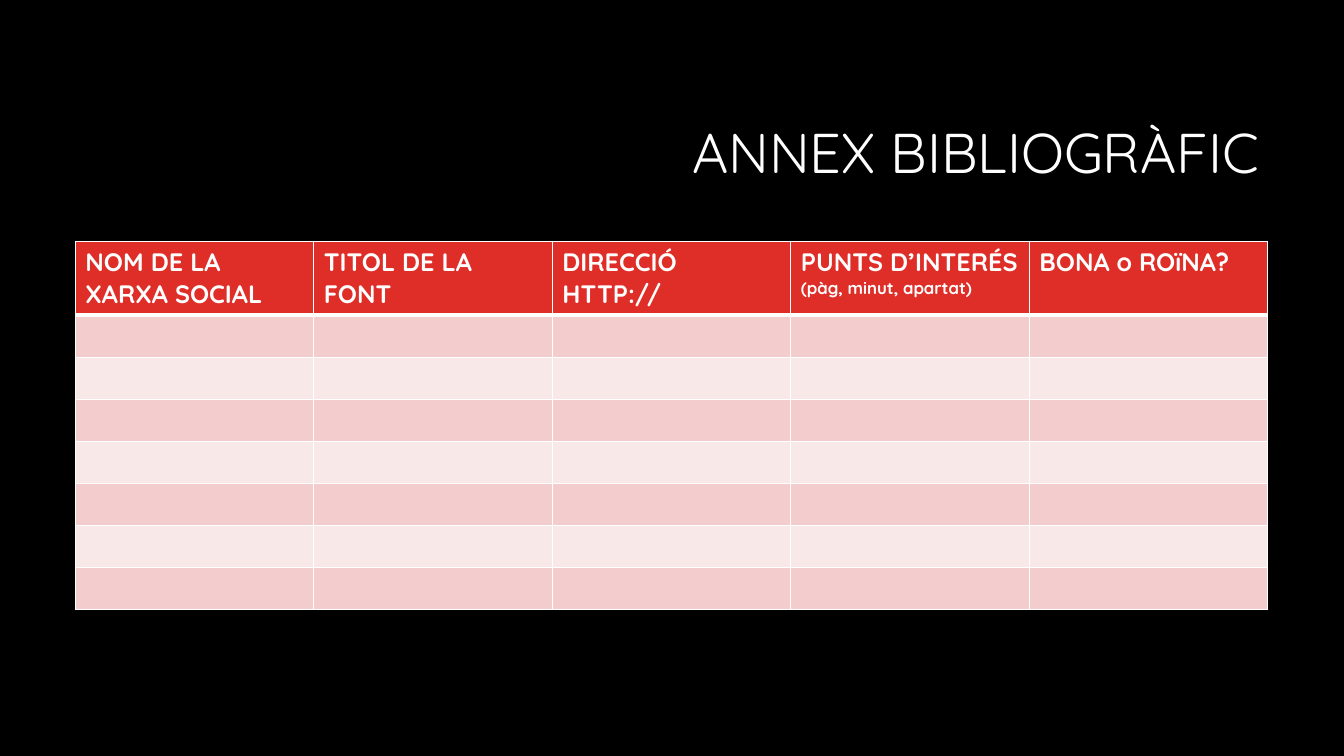
from lxml import etree
from pptx import Presentation
from pptx.dml.color import RGBColor
from pptx.enum.text import MSO_ANCHOR, PP_ALIGN
from pptx.oxml.ns import qn
from pptx.util import Cm, Pt

LEFT, RIGHT = PP_ALIGN.LEFT, PP_ALIGN.RIGHT
MIDDLE = MSO_ANCHOR.MIDDLE

COLORS = {
    "back": "000000",
    "text": "FFFFFF",
    "head": "DF2E28",
    "odd": "F3CDCD",
    "even": "F9E8E8",
}
FONT = "Quicksand"
HEADS = [
    [("NOM DE LA XARXA SOCIAL", 18)],
    [("TITOL DE LA FONT", 18)],
    [("DIRECCIÓ HTTP://", 18)],
    [("PUNTS D’INTERÉS", 18), ("(pàg, minut, apartat)", 12)],
    [("BONA o ROïNA?", 18)],
]
BLANK_ROWS = 7


def color(name):
    return RGBColor.from_string(COLORS[name])


def write(par, text, size=18, bold=False, align=LEFT, spacing=None):
    par.alignment = align
    if spacing:
        par.line_spacing = spacing
    run = par.add_run()
    run.text = text
    font = run.font
    font.name, font.size, font.bold = FONT, Pt(size), bold
    font.color.rgb = color("text")


def border(cell, **widths):
    """Draw white cell edges; widths maps L, R, T, B to points."""
    props = cell._tc.get_or_add_tcPr()
    for side, width in widths.items():
        line = etree.SubElement(props, qn(f"a:ln{side}"), w=str(Pt(width)))
        fill = etree.SubElement(line, qn("a:solidFill"))
        etree.SubElement(fill, qn("a:srgbClr"), val=COLORS["text"])


class Deck:
    def __init__(self):
        self.show = Presentation()
        self.show.slide_width = Cm(33.87)
        self.show.slide_height = Cm(19.05)

    def add_slide(self):
        self.slide = self.show.slides.add_slide(self.show.slide_layouts[5])
        fill = self.slide.background.fill
        fill.solid()
        fill.fore_color.rgb = color("back")

    def title(self, text, left, top, width, height):
        box = self.slide.shapes.title
        box.left, box.top = Cm(left), Cm(top)
        box.width, box.height = Cm(width), Cm(height)
        frame = box.text_frame
        frame.word_wrap = True
        frame.vertical_anchor = MIDDLE
        write(frame.paragraphs[0], text, size=40, align=RIGHT, spacing=0.9)

    def table(self, heads, blanks, left, top, width, first, step):
        """Make a header of height first above blank rows of height step."""
        shape = self.slide.shapes.add_table(
            blanks + 1, len(heads), Cm(left), Cm(top),
            Cm(width), Cm(first + blanks * step))
        table = shape.table
        for col in table.columns:
            col.width = Cm(width / len(heads))
        for i, row in enumerate(table.rows):
            row.height = Cm(step if i else first)
            tone = ("even", "odd")[i % 2] if i else "head"
            for cell in row.cells:
                border(cell, L=1, R=1, T=3 if i == 1 else 1, B=1 if i else 3)
                cell.fill.solid()
                cell.fill.fore_color.rgb = color(tone)
        for cell, lines in zip(table.rows[0].cells, heads):
            frame = cell.text_frame
            for i, (text, size) in enumerate(lines):
                par = frame.add_paragraph() if i else frame.paragraphs[0]
                write(par, text, size=size, bold=True)


def main():
    deck = Deck()
    deck.add_slide()
    deck.title("ANNEX BIBLIOGRÀFIC", 8.05, 2.13, 23.93, 3.58)
    deck.table(HEADS, BLANK_ROWS, 1.9, 6.08, 30.05, first=1.86, step=1.06)
    deck.show.save("out.pptx")


if __name__ == "__main__":
    main()
